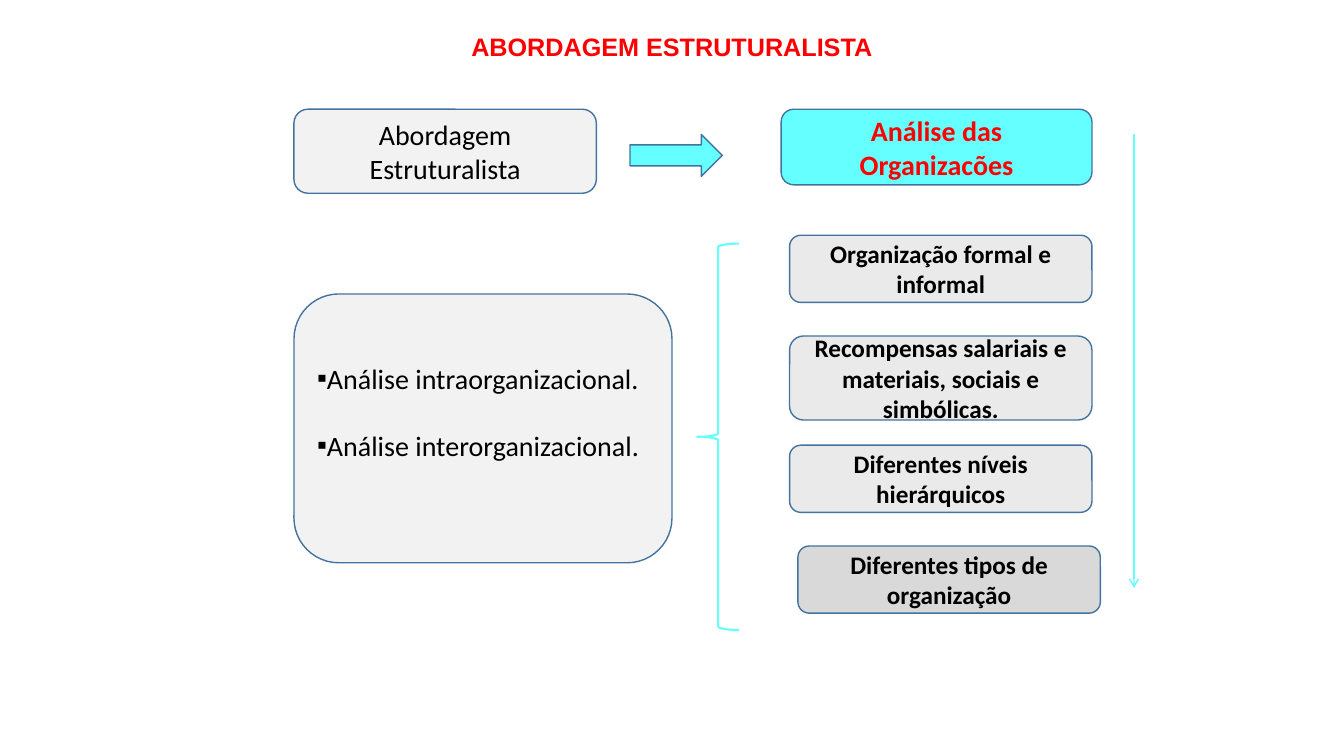
"""Build the slide on the structuralist approach to organizations."""
from lxml.etree import SubElement
from pptx import Presentation
from pptx.dml.color import RGBColor
from pptx.enum.shapes import MSO_CONNECTOR as Connector, MSO_SHAPE as Shape
from pptx.enum.text import MSO_ANCHOR as Anchor, PP_ALIGN as Align
from pptx.oxml.ns import qn
from pptx.util import Pt

CYAN, RED, BLACK = "66FFFF", "FF0000", "000000"
PALE, LIGHT, GREY, OUTLINE = "F2F2F2", "EAEAEA", "D9D9D9", "43739E"


def color(value):
    return RGBColor.from_string(value)


def apply(target, values):
    for name, value in values.items():
        setattr(target, name, value)


class SlideBuilder:
    """Hold the text style and the current slide."""

    def __init__(self, presentation):
        self.slide = presentation.slides.add_slide(presentation.slide_layouts[6])
        self.frame_format = {"word_wrap": True, "vertical_anchor": Anchor.MIDDLE}

    def fill_text(self, frame, lines, ink=BLACK, align=Align.CENTER, gap=0, **font):
        apply(frame, self.frame_format)
        values = {"name": "Calibri", "size": Pt(18), "bold": False} | font
        for index, line in enumerate(lines):
            paragraph = frame.paragraphs[0] if index == 0 else frame.add_paragraph()
            apply(paragraph, {"alignment": align, "space_before": Pt(gap * index)})
            run = paragraph.add_run()
            run.text = line
            apply(run.font, values)
            run.font.color.rgb = color(ink)

    def title(self, box, text):
        frame = self.slide.shapes.add_textbox(*map(Pt, box)).text_frame
        self.fill_text(frame, [text], RED, name="Arial", bold=True)
        frame.vertical_anchor = Anchor.TOP
        frame.paragraphs[0].line_spacing = 0.9

    def shape(self, kind, box, fill=None, line=OUTLINE, width=1):
        shape = self.slide.shapes.add_shape(kind, *map(Pt, box))
        shape.shadow.inherit = False
        if fill:
            shape.fill.solid()
            shape.fill.fore_color.rgb = color(fill)
        else:
            shape.fill.background()
        shape.line.color.rgb = color(line)
        shape.line.width = Pt(width)
        return shape

    def card(self, kind, box, fill, text, **style):
        self.fill_text(self.shape(kind, box, fill).text_frame, [text], **style)

    def bullets(self, box, fill, lines, gap):
        frame = self.shape(Shape.FLOWCHART_ALTERNATE_PROCESS, box, fill).text_frame
        self.fill_text(frame, lines, align=Align.LEFT, gap=gap, size=Pt(20))
        frame.margin_bottom = Pt(3.6 + gap)
        for paragraph in frame.paragraphs:
            properties = paragraph._p.get_or_add_pPr()
            SubElement(properties, qn("a:buFont"), typeface="Arial")
            SubElement(properties, qn("a:buChar"), char="▪")

    def arrow(self, ends, line):
        connector = self.slide.shapes.add_connector(Connector.STRAIGHT, *map(Pt, ends))
        connector.line.color.rgb = color(line)
        connector.line.width = Pt(1)
        SubElement(connector.line._get_or_add_ln(), qn("a:tailEnd"), type="arrow")
        SubElement(connector._element.spPr, qn("a:effectLst"))


def main():
    presentation = Presentation()
    apply(presentation, {"slide_width": Pt(960), "slide_height": Pt(540)})
    builder = SlideBuilder(presentation)
    builder.title((156, 21.6, 648, 44), "ABORDAGEM ESTRUTURALISTA")
    builder.shape(Shape.RIGHT_ARROW, (450, 96, 66, 30), CYAN)
    topics = [
        (564, 168, 48, LIGHT, "Organização formal e informal"),
        (564, 240, 60, LIGHT, "Recompensas salariais e materiais, sociais e simbólicas."),
        (564, 318, 48, LIGHT, "Diferentes níveis hierárquicos"),
        (570, 390, 48, GREY, "Diferentes tipos de organização"),
    ]
    for left, top, height, fill, text in topics:
        builder.card(Shape.ROUNDED_RECTANGLE, (left, top, 216, height), fill, text, bold=True)
    heading = Shape.FLOWCHART_ALTERNATE_PROCESS
    builder.card(heading, (210, 78, 216, 60), PALE, "Abordagem Estruturalista", size=Pt(20))
    builder.bullets((210, 210, 270, 192), PALE,
                    ["Análise intraorganizacional.", "Análise interorganizacional."], 24)
    builder.card(heading, (558, 78, 222, 54), CYAN, "Análise das Organizacões",
                 ink=RED, size=Pt(20), bold=True)
    builder.arrow((810, 96, 810, 420), CYAN)
    builder.shape(Shape.LEFT_BRACE, (498, 174, 30, 276), line=CYAN, width=1.5)
    presentation.save("out.pptx")


if __name__ == "__main__":
    main()
